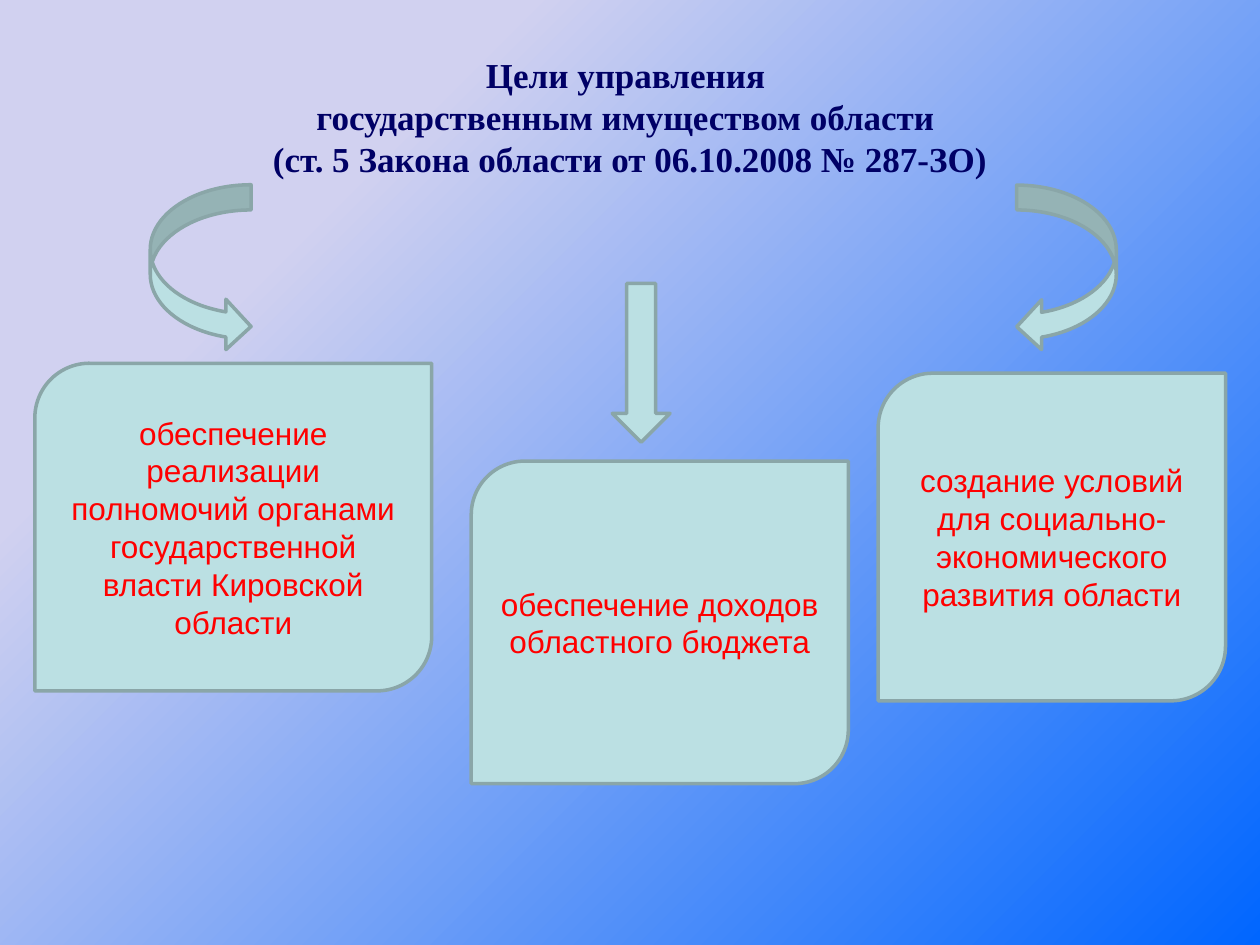
from dataclasses import dataclass

from pptx import Presentation
from pptx.dml.color import RGBColor
from pptx.enum.shapes import MSO_SHAPE as Shape
from pptx.enum.text import MSO_ANCHOR as Anchor, MSO_AUTO_SIZE as AutoSize, PP_ALIGN as Align
from pptx.util import Pt


@dataclass(frozen=True)
class Theme:
    """Colours, fonts and type sizes of the deck."""

    sky: str = "D1D1F0"
    deep: str = "0066FF"
    panel: str = "BBE0E3"
    outline: str = "8AA6A8"
    heading: str = "000066"
    body: str = "FF0000"
    heading_font: str = "Times New Roman"
    body_font: str = "Arial"
    heading_size: int = 20
    body_size: int = 18
    outline_width: int = 2


class PageBuilder:
    """Draws styled elements on one page."""

    def __init__(self, page, theme):
        """Keep the page and its theme."""
        self.page = page
        self.theme = theme

    def background(self):
        """Fill the page with a diagonal gradient."""
        fill = self.page.background.fill
        fill.gradient()
        fill.gradient_angle = 315
        stops = ((0.24, self.theme.sky), (1, self.theme.deep))
        for stop, (position, color) in zip(fill.gradient_stops, stops):
            stop.position = position
            stop.color.rgb = RGBColor.from_string(color)

    def centred_text(self, box, text, font, size, color, bold=False):
        """Put one centred paragraph in a box."""
        frame = box.text_frame
        frame.word_wrap = True
        frame.auto_size = AutoSize.NONE
        frame.vertical_anchor = Anchor.MIDDLE
        para = frame.paragraphs[0]
        para.text = text
        para.alignment = Align.CENTER
        for span in para.runs:
            span.font.name = font
            span.font.size = Pt(size)
            span.font.bold = bold
            span.font.color.rgb = RGBColor.from_string(color)

    def title(self, text, left, top, width, height):
        """Place and format the title placeholder."""
        box = self.page.shapes.title
        box.left, box.top, box.width, box.height = map(Pt, (left, top, width, height))
        theme = self.theme
        self.centred_text(box, text, theme.heading_font, theme.heading_size, theme.heading, True)

    def shape(self, kind, left, top, width, height):
        """Add a filled and outlined preset shape."""
        shape = self.page.shapes.add_shape(kind, *map(Pt, (left, top, width, height)))
        shape.shadow.inherit = False
        shape.fill.solid()
        shape.fill.fore_color.rgb = RGBColor.from_string(self.theme.panel)
        shape.line.color.rgb = RGBColor.from_string(self.theme.outline)
        shape.line.width = Pt(self.theme.outline_width)
        return shape

    def goal(self, text, left, top, width, height):
        """Add a goal panel with its wording."""
        box = self.shape(Shape.ROUND_2_DIAG_RECTANGLE, left, top, width, height)
        theme = self.theme
        self.centred_text(box, text, theme.body_font, theme.body_size, theme.body)


def main():
    """Build and save the deck."""
    deck = Presentation()
    deck.slide_width, deck.slide_height = Pt(720), Pt(540)
    builder = PageBuilder(deck.slides.add_slide(deck.slide_layouts[5]), Theme())
    builder.background()
    builder.title(
        "Цели управления \vгосударственным имуществом области \v"
        "(ст. 5 Закона области от 06.10.2008 № 287-ЗО)",
        36, 21.6, 648, 90,
    )
    goals = (
        ("обеспечение реализации полномочий органами государственной власти Кировской области",
         19.9, 207.6, 226.8, 187.2),
        ("обеспечение доходов областного бюджета", 269.3, 263.5, 215.5, 184.3),
        ("создание условий для социально-экономического развития области",
         501.8, 213.3, 198.5, 187.2),
    )
    for goal in goals:
        builder.goal(*goal)
    arrows = (
        (Shape.CURVED_RIGHT_ARROW, 85.9, 105.6, 57.6, 95.4),
        (Shape.CURVED_LEFT_ARROW, 581, 105.8, 56.9, 95.2),
        (Shape.DOWN_ARROW, 349.9, 162, 33, 90.7),
    )
    for arrow in arrows:
        builder.shape(*arrow)
    deck.save("out.pptx")


if __name__ == "__main__":
    main()
